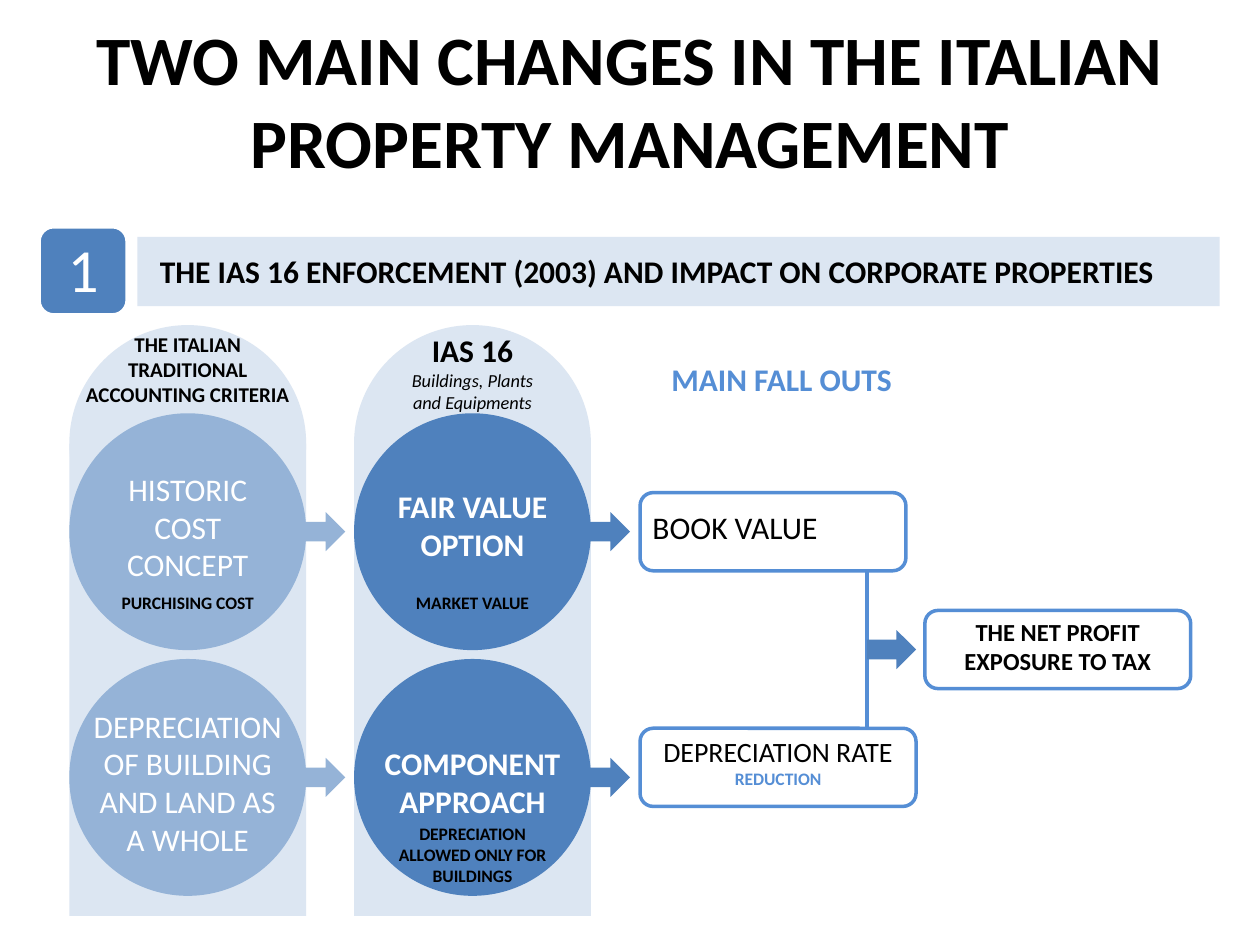
from pptx import Presentation
from pptx.dml.color import RGBColor
from pptx.enum.shapes import MSO_CONNECTOR, MSO_SHAPE as SHAPE
from pptx.enum.text import MSO_ANCHOR as ANCHOR, PP_ALIGN as ALIGN
from pptx.util import Inches, Pt
from lxml import etree

COLORS = {"black": "000000", "white": "FFFFFF", "pale": "DCE6F2",
          "light": "95B3D7", "mid": "4F81BD", "accent": "558ED5"}
FONT = "Calibri"
ARROW_W, ARROW_H = 0.39, 0.31


def rgb(name):
    return RGBColor.from_string(COLORS[name])


def add_shape(s, kind, x, y, w, h, fill=None, line=None):
    sp = s.shapes.add_shape(kind, Inches(x), Inches(y), Inches(w), Inches(h))
    sp.shadow.inherit = False
    if fill:
        sp.fill.solid()
        sp.fill.fore_color.rgb = rgb(fill)
    else:
        sp.fill.background()
    if line:
        sp.line.color.rgb = rgb(line)
        sp.line.width = Pt(2)
    else:
        sp.line.fill.background()
    return sp


def add_text(s, x, y, w, h, lines, align=ALIGN.CENTER, anchor=ANCHOR.TOP):
    sp = s.shapes.add_textbox(Inches(x), Inches(y), Inches(w), Inches(h))
    tf = sp.text_frame
    tf.word_wrap = True
    tf.vertical_anchor = anchor
    for i, (text, size, color, style) in enumerate(lines):
        p = tf.paragraphs[0] if i == 0 else tf.add_paragraph()
        p.text = text
        p.alignment = align
        p.font.name = FONT
        p.font.size = Pt(size)
        p.font.bold = "b" in style
        p.font.italic = "i" in style
        p.font.color.rgb = rgb(color)
    return sp


def add_title(s, x, y, w, h):
    add_text(s, x, y, w, h,
             [("TWO MAIN CHANGES IN THE ITALIAN PROPERTY MANAGEMENT", 39.6, "black", "b")],
             anchor=ANCHOR.MIDDLE)


def add_banner(s, x, y, w, h):
    add_shape(s, SHAPE.ROUNDED_RECTANGLE, x, y, h, h, "mid", "white")
    add_text(s, x, y, h, h - 0.04, [("1", 35, "white", "")], anchor=ANCHOR.MIDDLE)
    add_shape(s, SHAPE.RECTANGLE, x + 0.78, y + 0.08, w - 0.78, 0.55, "pale")
    add_text(s, x + 0.86, y + 0.15, w - 0.86, 0.4,
             [("THE IAS 16 ENFORCEMENT (2003) AND IMPACT ON CORPORATE PROPERTIES",
               18, "black", "b")], align=ALIGN.LEFT)


def add_column(s, x, y, w, h, header, fill, style, circles):
    add_shape(s, SHAPE.RECTANGLE, x, y + w / 2, w, h - w / 2, "pale")
    add_shape(s, SHAPE.OVAL, x, y, w, w, "pale")
    add_text(s, x - 0.15, y, w + 0.3, 0.71, header)
    for i, (label, label_y, note, note_y) in enumerate(circles):
        top = y + 0.7 + i * 1.95
        add_shape(s, SHAPE.OVAL, x, top, w, w, fill)
        add_shape(s, SHAPE.RIGHT_ARROW, x + w - 0.08, top + (w - ARROW_H) / 2,
                  ARROW_W, ARROW_H, fill)
        add_text(s, x + 0.08, top + label_y, w - 0.16, 1, [(label, 18, "white", style)])
        if note:
            add_text(s, x + 0.16, top + note_y, w - 0.32, 0.27, [(note, 10, "black", "b")])


def add_outcome(s, x, y, w, h, lines, text_dy=0, align=ALIGN.CENTER):
    add_shape(s, SHAPE.ROUNDED_RECTANGLE, x, y, w, h, line="accent")
    add_text(s, x, y + text_dy, w, h - text_dy, lines, align)


def add_fall_outs(s, x, y):
    add_text(s, x + 0.15, y, 3.2, 0.4, [("MAIN FALL OUTS", 18, "accent", "b")], ALIGN.LEFT)
    box_h = 0.62
    book_y, rate_y = y + 1.1, y + 2.97
    trunk_x, middle = x + 1.8, (book_y + rate_y + box_h) / 2
    add_outcome(s, x, book_y, 2.11, box_h, [("BOOK VALUE", 18, "black", "")], 0.07, ALIGN.LEFT)
    add_outcome(s, x, rate_y, 2.19, box_h,
                [("DEPRECIATION RATE", 16, "black", ""), ("REDUCTION", 10, "accent", "b")])
    trunk = s.shapes.add_connector(MSO_CONNECTOR.STRAIGHT, Inches(trunk_x),
                                   Inches(book_y + box_h), Inches(trunk_x), Inches(rate_y))
    trunk.line.color.rgb = rgb("accent")
    trunk.line.width = Pt(2)
    etree.SubElement(trunk.element.spPr,
                     "{http://schemas.openxmlformats.org/drawingml/2006/main}effectLst")
    add_shape(s, SHAPE.RIGHT_ARROW, trunk_x, middle - ARROW_H / 2, ARROW_W, ARROW_H, "mid")
    add_outcome(s, x + 2.26, middle - box_h / 2, 2.11, box_h,
                [("THE NET PROFIT EXPOSURE TO TAX", 14, "black", "b")])


def main():
    prs = Presentation()
    prs.slide_width, prs.slide_height = Inches(10), Inches(7.5)
    s = prs.slides.add_slide(prs.slide_layouts[6])
    add_title(s, 0.5, 0.16, 9, 1.25)
    add_banner(s, 0.31, 1.8, 9.37, 0.7)
    add_column(s, 0.55, 2.58, 1.88, 4.69,
               [(t, 12, "black", "b")
                for t in ("THE ITALIAN", "TRADITIONAL", "ACCOUNTING CRITERIA")],
               "light", "",
               [("HISTORIC COST CONCEPT", 0.4, "PURCHISING COST", 1.37),
                ("DEPRECIATION OF BUILDING AND LAND AS A WHOLE", 0.33, None, 0)])
    add_column(s, 2.81, 2.58, 1.88, 4.69,
               [("IAS 16", 18, "black", "b"),
                ("Buildings, Plants", 10.5, "black", "i"),
                ("and Equipments", 10.5, "black", "i")],
               "mid", "b",
               [("FAIR VALUE OPTION", 0.54, "MARKET VALUE", 1.37),
                ("COMPONENT APPROACH", 0.63,
                 "DEPRECIATION ALLOWED ONLY FOR BUILDINGS", 1.25)])
    add_fall_outs(s, 5.08, 2.81)
    prs.save("out.pptx")


if __name__ == "__main__":
    main()
